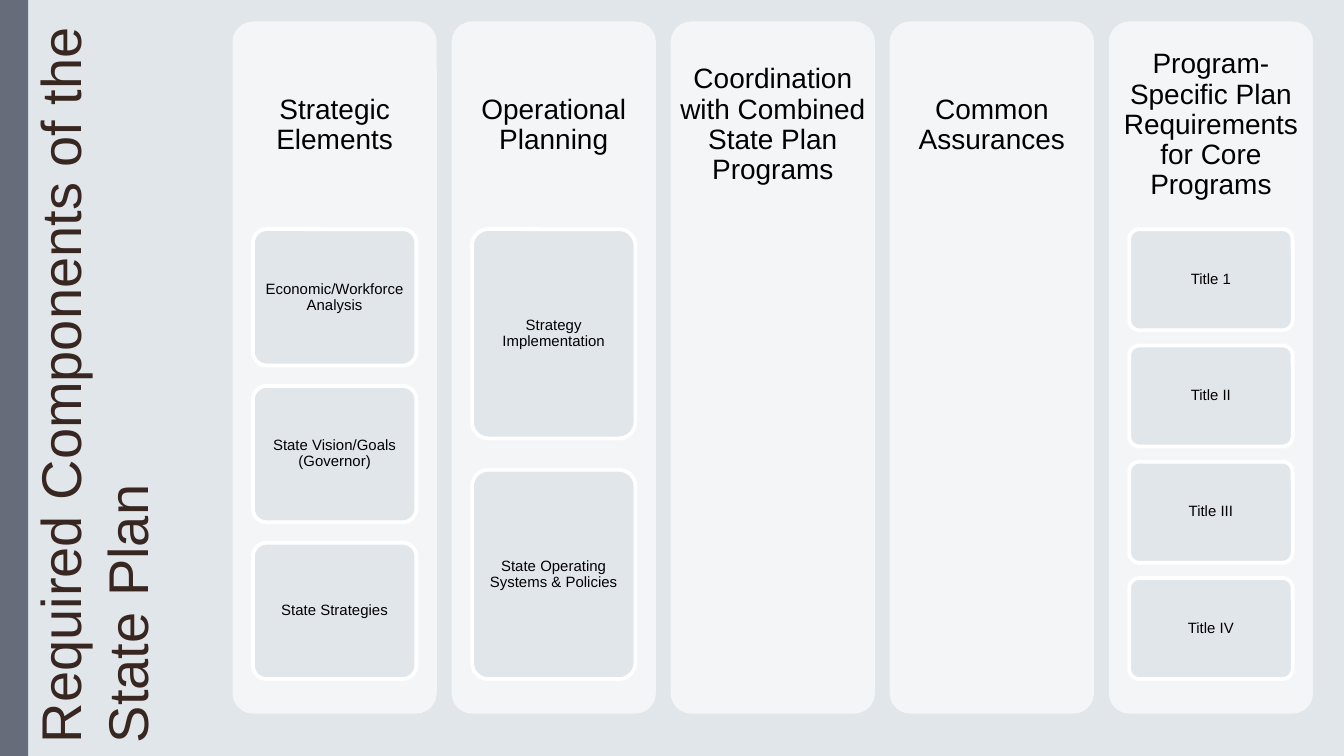
from dataclasses import dataclass

from pptx import Presentation
from pptx.dml.color import RGBColor
from pptx.enum import shapes, text
from pptx.util import Inches, Pt

W = 10
H = W * 9 / 16


@dataclass(frozen=True)
class Theme:
    back: str = "E1E6EB"
    bar: str = "666C79"
    panel: str = "F4F5F7"
    outline: str = "FFFFFF"
    title: str = "382620"
    ink: str = "000000"
    font: str = "Arial"
    title_pt: int = 30
    head_pt: int = 15
    card_pt: int = 8


T = Theme()
COLUMNS = [
    ("Strategic Elements",
     ["Economic/Workforce Analysis", "State Vision/Goals (Governor)", "State Strategies"]),
    ("Operational Planning",
     ["Strategy Implementation", "State Operating Systems & Policies"]),
    ("Coordination with Combined State Plan Programs", []),
    ("Common Assurances", []),
    ("Program-Specific Plan Requirements for Core Programs",
     ["Title 1", "Title II", "Title III", "Title IV"]),
]


def set_text(sp, content, size, color, align, inset, spacing):
    tf = sp.text_frame
    tf.text = content
    frame = dict(word_wrap=True, auto_size=text.MSO_AUTO_SIZE.NONE,
                 vertical_anchor=text.MSO_ANCHOR.MIDDLE)
    frame.update({f"margin_{side}": Inches(inset)
                  for side in ("left", "top", "right", "bottom")})
    for name, value in frame.items():
        setattr(tf, name, value)
    p = tf.paragraphs[0]
    p.alignment, p.line_spacing = align, spacing
    font = p.runs[0].font
    for name, value in dict(name=T.font, size=Pt(size)).items():
        setattr(font, name, value)
    font.color.rgb = RGBColor.from_string(color)


def add_block(slide, kind, box, fill, outline=None):
    sp = slide.shapes.add_shape(kind, *map(Inches, box))
    sp.shadow.inherit = False
    sp.fill.solid()
    sp.fill.fore_color.rgb = RGBColor.from_string(fill)
    if outline:
        sp.line.color.rgb = RGBColor.from_string(outline)
        sp.line.width = Pt(2)
    else:
        sp.line.fill.background()
    if kind == shapes.MSO_SHAPE.ROUNDED_RECTANGLE:
        sp.adjustments[0] = 0.1
    return sp


def add_title(slide, box, content):
    """Turn the title a quarter left so that it fills the upright box."""
    x, y, w, h = box
    sp = slide.shapes.title
    place = dict(left=x + (w - h) / 2, top=y + (h - w) / 2, width=h, height=w)
    for name, value in place.items():
        setattr(sp, name, Inches(value))
    sp.rotation = 270
    set_text(sp, content, T.title_pt, T.title, text.PP_ALIGN.LEFT, 0.1, 1.0)


def add_cards(slide, box, labels):
    """Stack equal cards with gaps of a fixed share of the card height."""
    x, y, w, h = box
    gap_share = 0.15
    n = len(labels)
    card_h = h / (n + (n - 1) * gap_share)
    for i, label in enumerate(labels):
        top = y + i * card_h * (1 + gap_share)
        sp = add_block(slide, shapes.MSO_SHAPE.ROUNDED_RECTANGLE,
                       (x, top, w, card_h), T.back, T.outline)
        set_text(sp, label, T.card_pt, T.ink, text.PP_ALIGN.CENTER, 0.02, 0.9)


def add_column(slide, box, heading, labels):
    x, y, w, h = box
    add_block(slide, shapes.MSO_SHAPE.ROUNDED_RECTANGLE, box, T.panel)
    # Heading takes the top 30 percent, cards the next 65
    sp = slide.shapes.add_textbox(*map(Inches, (x, y, w, 0.3 * h)))
    set_text(sp, heading, T.head_pt, T.ink, text.PP_ALIGN.CENTER, 0.06, 0.9)
    if labels:
        add_cards(slide, (x + 0.1 * w, y + 0.3 * h, 0.8 * w, 0.65 * h), labels)


def add_columns(slide, box, columns):
    x, y, w, h = box
    gap = 0.11
    col_w = (w - gap * (len(columns) - 1)) / len(columns)
    for i, (heading, labels) in enumerate(columns):
        add_column(slide, (x + i * (col_w + gap), y, col_w, h), heading, labels)


def main():
    prs = Presentation()
    prs.slide_width, prs.slide_height = Inches(W), Inches(H)
    slide = prs.slides.add_slide(prs.slide_layouts[5])
    slide.background.fill.solid()
    slide.background.fill.fore_color.rgb = RGBColor.from_string(T.back)

    # Side bar, upright title, columns
    add_block(slide, shapes.MSO_SHAPE.RECTANGLE, (0, 0, 0.21, H), T.bar)
    add_title(slide, (0.39, -0.46, 0.6, 6.09), "Required Components of the State Plan")
    add_columns(slide, (1.73, 0.16, 8.04, 5.15), COLUMNS)
    prs.save("out.pptx")


if __name__ == "__main__":
    main()
